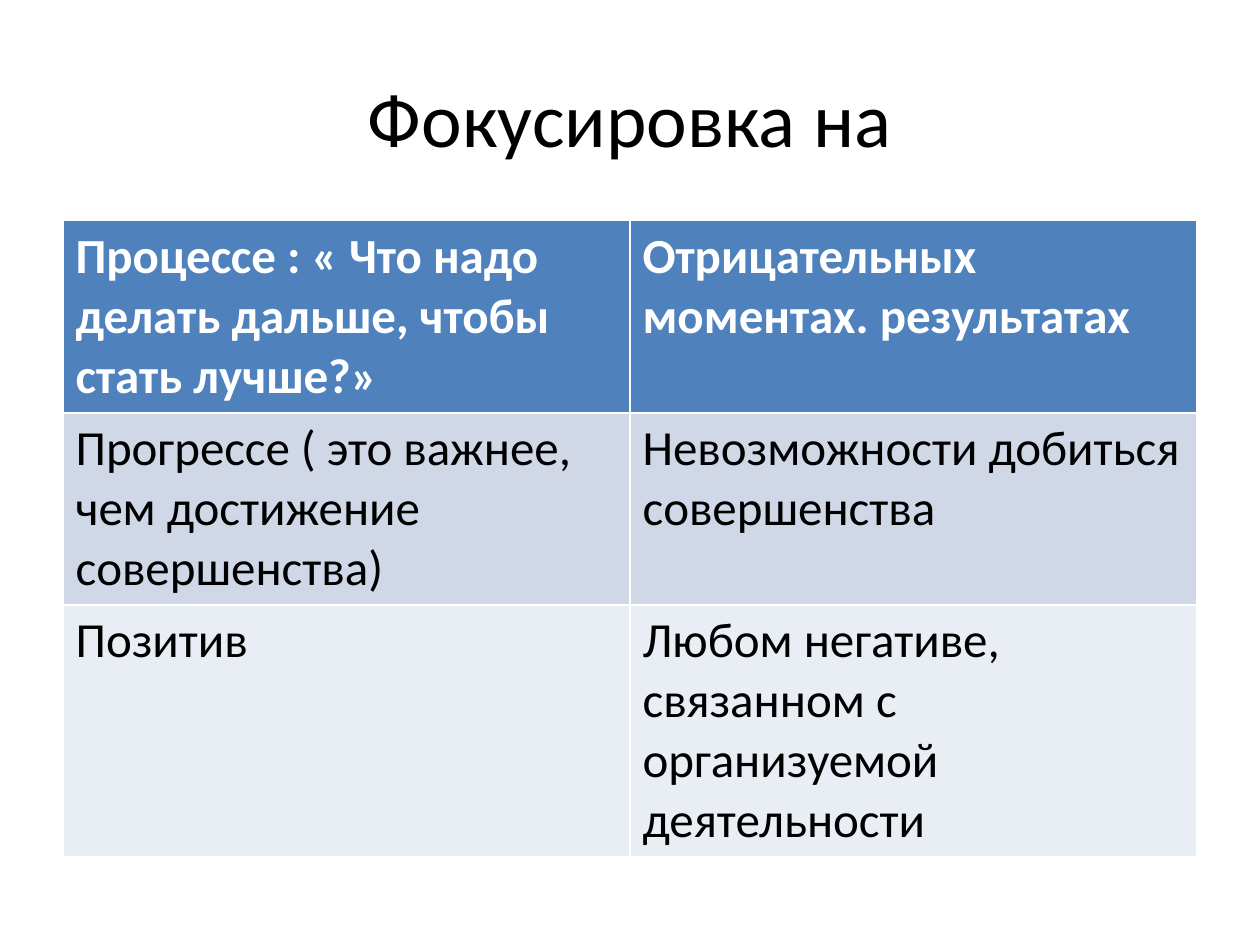
from pptx import Presentation
from pptx.dml.color import RGBColor
from pptx.enum.text import MSO_ANCHOR, PP_ALIGN
from pptx.util import Inches, Pt

TITLE = "Фокусировка на"
ROWS = [
    ("Процессе : « Что надо делать дальше, чтобы стать лучше?»",
     "Отрицательных моментах. результатах"),
    ("Прогрессе ( это важнее, чем достижение совершенства)",
     "Невозможности добиться совершенства"),
    ("Позитив",
     "Любом негативе, связанном с организуемой деятельности"),
]
# Fill, text colour and bold for each row, then its height in inches
ROW_STYLES = [
    ("4F81BD", "FFFFFF", True),
    ("D0D8E8", "000000", False),
    ("E9EDF4", "000000", False),
]
ROW_HEIGHTS = [1.5, 1.5, 1.97]

WIDTH, HEIGHT, MARGIN = 10, 7.5, 0.5
CONTENT_WIDTH = WIDTH - 2 * MARGIN
TITLE_TOP, TITLE_HEIGHT, TABLE_TOP = 0.3, 1.25, 1.75


def color(value):
    return RGBColor.from_string(value)


def set_font(para, size, text_color, bold=False):
    font = para.font
    font.name, font.size, font.bold = "Calibri", Pt(size), bold
    font.color.rgb = color(text_color)


deck = Presentation()
deck.slide_width, deck.slide_height = Inches(WIDTH), Inches(HEIGHT)
page = deck.slides.add_slide(deck.slide_layouts[5])

# Title
title = page.shapes.title
title.left, title.top = Inches(MARGIN), Inches(TITLE_TOP)
title.width, title.height = Inches(CONTENT_WIDTH), Inches(TITLE_HEIGHT)
title.text_frame.text = TITLE
title.text_frame.vertical_anchor = MSO_ANCHOR.MIDDLE
title_para = title.text_frame.paragraphs[0]
title_para.alignment = PP_ALIGN.CENTER
set_font(title_para, 44, "000000")

# Comparison table; the default table style draws the white borders
table = page.shapes.add_table(
    len(ROWS), len(ROWS[0]), Inches(MARGIN), Inches(TABLE_TOP),
    Inches(CONTENT_WIDTH), Inches(sum(ROW_HEIGHTS))).table
for row, texts, height, style in zip(table.rows, ROWS, ROW_HEIGHTS, ROW_STYLES):
    row.height = Inches(height)
    fill, text_color, bold = style
    for cell, text in zip(row.cells, texts):
        cell.text = text
        cell.fill.solid()
        cell.fill.fore_color.rgb = color(fill)
        set_font(cell.text_frame.paragraphs[0], 28, text_color, bold)

deck.save("out.pptx")
